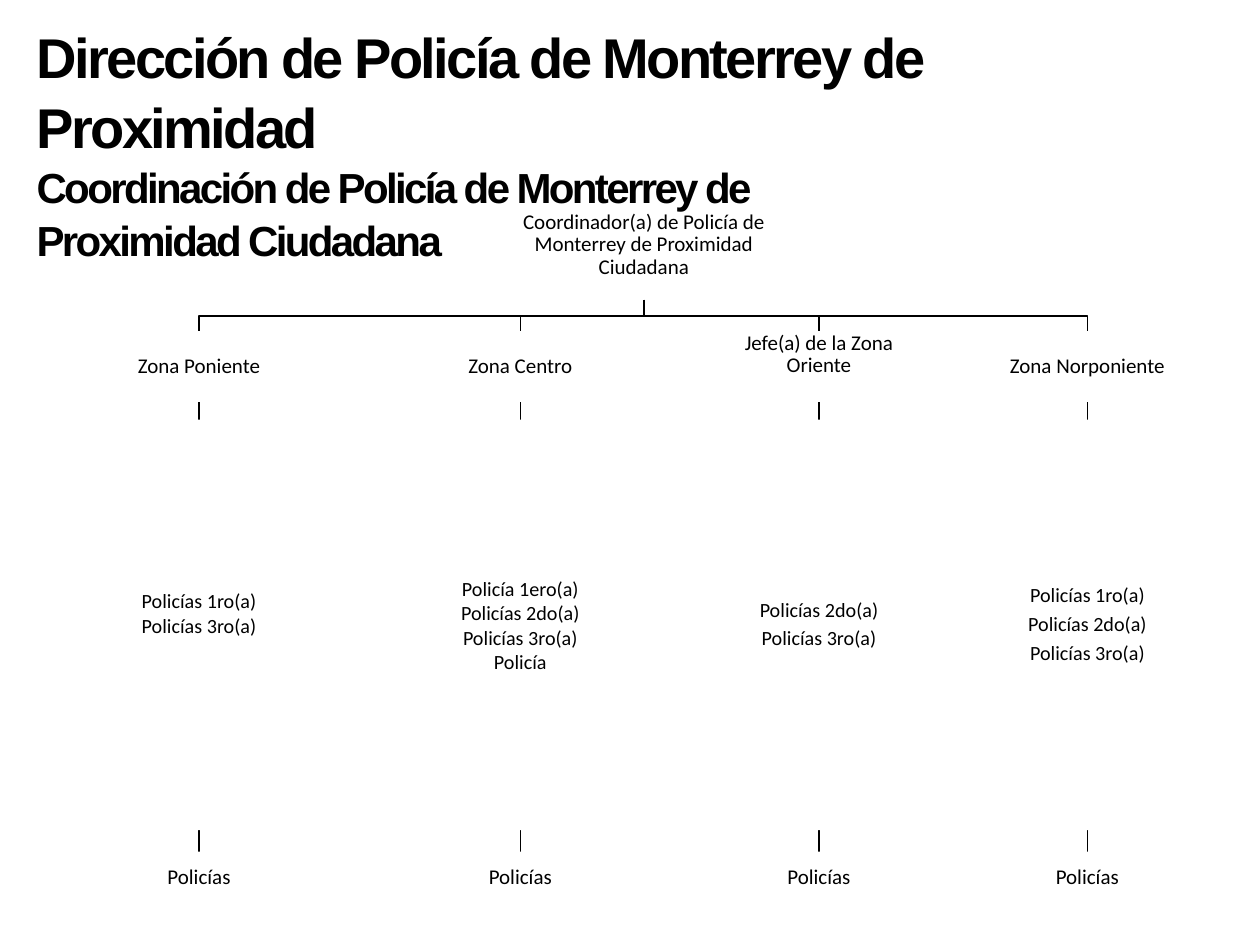
import pptx
import pptx.dml.color
import pptx.enum.shapes
import pptx.enum.text
import pptx.oxml
import pptx.util

Inches, Pt = pptx.util.Inches, pptx.util.Pt
ALIGN = pptx.enum.text.PP_ALIGN
ANCHOR = pptx.enum.text.MSO_ANCHOR
RECT = pptx.enum.shapes.MSO_SHAPE.RECTANGLE

COORD_X = 5.11
COORD_BOTTOM, BUS_Y = 2.38, 2.51
ZONE_TOP, ZONE_BOTTOM = 2.63, 3.19
RANKS_TOP, RANKS_BOTTOM = 3.33, 6.59
OFFICERS_TOP, OFFICERS_BOTTOM = 6.76, 7.17

SPACED = {"line_spacing": 0.9, "space_after": Pt(4)}
PLAIN = {"line_spacing": 1.0, "space_after": Pt(0)}
# Bottom inset that lifts centred text by half a line
LIFT = 0.2

# centre x, name, name inset, ranks width, ranks, ranks format, ranks inset
ZONES = [
    (1.58, "Zona Poniente", 0.01, 2.24,
     ["Policías 1ro(a)", "Policías 3ro(a)"], PLAIN, LIFT),
    (4.13, "Zona Centro", 0.01, 2.36,
     ["Policía 1ero(a)", "Policías 2do(a)", "Policías 3ro(a)", "Policía"],
     PLAIN, 0.01),
    (6.5, "Jefe(a) de la Zona Oriente", LIFT, 1.88,
     ["Policías 2do(a)", "Policías 3ro(a)"], SPACED, 0.01),
    (8.63, "Zona Norponiente", 0.01, 1.88,
     ["Policías 1ro(a)", "Policías 2do(a)", "Policías 3ro(a)"], SPACED, 0.01),
]


def color(value):
    return pptx.dml.color.RGBColor.from_string(value)


def apply(obj, values):
    for name, value in values.items():
        setattr(obj, name, value)


class Chart:
    """Style and current slide of the organisation chart."""
    ink, paper = "000000", "FFFFFF"
    title_font, body_font = "Arial", "Calibri"

    def __init__(self, slide):
        self.s = slide

    def add_text(self, p, text, font, size, bold=False):
        r = p.add_run()
        r.text = text
        apply(r.font, {"name": font, "size": Pt(size), "bold": bold})
        r.font.color.rgb = color(self.ink)
        return r

    def title(self, lines, left, top, width, height):
        sp = self.s.shapes.title
        apply(sp, {"left": Inches(left), "top": Inches(top),
                   "width": Inches(width), "height": Inches(height)})
        tf = sp.text_frame
        apply(tf, {"word_wrap": True, "vertical_anchor": ANCHOR.TOP,
                   "auto_size": pptx.enum.text.MSO_AUTO_SIZE.NONE,
                   "margin_top": Inches(0.07)})
        for i, (text, size) in enumerate(lines):
            p = tf.add_paragraph() if i else tf.paragraphs[0]
            apply(p, {"alignment": ALIGN.LEFT, "line_spacing": 1.04,
                      "space_before": Pt(0)})
            r = self.add_text(p, text, self.title_font, size, True)
            r.font._element.set("spc", "-150")

    def box(self, lines, cx, top, width, bottom, size=12, style=SPACED,
            inset=0.01, filled=True):
        area = [Inches(v) for v in (cx - width / 2, top, width, bottom - top)]
        if filled:
            sp = self.s.shapes.add_shape(RECT, *area)
            sp.shadow.inherit = False
            sp.fill.solid()
            sp.fill.fore_color.rgb = color(self.paper)
            sp.line.fill.background()
        else:
            sp = self.s.shapes.add_textbox(*area)
        tf = sp.text_frame
        edge = Inches(0.01)
        apply(tf, {"word_wrap": True, "vertical_anchor": ANCHOR.MIDDLE,
                   "margin_left": edge, "margin_right": edge,
                   "margin_top": edge, "margin_bottom": Inches(inset)})
        for i, text in enumerate(lines):
            p = tf.add_paragraph() if i else tf.paragraphs[0]
            apply(p, {"alignment": ALIGN.CENTER, **style})
            self.add_text(p, text, self.body_font, size)

    def stroke(self, line):
        line.color.rgb = color(self.ink)
        line.width = Pt(1)

    def stub(self, x, top, bottom):
        c = self.s.shapes.add_connector(
            pptx.enum.shapes.MSO_CONNECTOR.STRAIGHT,
            Inches(x), Inches(top), Inches(x), Inches(bottom))
        self.stroke(c.line)
        c._element.spPr.append(pptx.oxml.parse_xml(
            '<a:effectLst xmlns:a="http://schemas.openxmlformats.org/drawingml/2006/main"/>'))

    def branch(self, x):
        """Draw the elbow from the coordinator down to a zone."""
        points = [(Inches(a), Inches(b)) for a, b in (
            (COORD_X, COORD_BOTTOM), (COORD_X, BUS_Y), (x, BUS_Y), (x, ZONE_TOP))]
        fb = self.s.shapes.build_freeform(*points[0])
        fb.add_line_segments(points[1:], close=False)
        sp = fb.convert_to_shape()
        sp.shadow.inherit = False
        sp.fill.background()
        self.stroke(sp.line)


def main():
    prs = pptx.Presentation()
    prs.slide_width, prs.slide_height = Inches(10), Inches(7.5)
    chart = Chart(prs.slides.add_slide(prs.slide_layouts[5]))

    chart.title([("Dirección de Policía de Monterrey de Proximidad", 32),
                 ("Coordinación de Policía de Monterrey de Proximidad Ciudadana", 24)],
                0.19, 0.09, 7.46, 2.39)
    for x, *_ in reversed(ZONES):
        chart.stub(x, RANKS_BOTTOM, OFFICERS_TOP)
        chart.stub(x, ZONE_BOTTOM, RANKS_TOP)
        chart.branch(x)

    chart.box(["Coordinador(a) de Policía de Monterrey de Proximidad Ciudadana"],
              COORD_X, 1.7, 2.48, COORD_BOTTOM, inset=LIFT, filled=False)
    for x, name, name_inset, width, ranks, style, ranks_inset in ZONES:
        chart.box([name], x, ZONE_TOP, 1.54, ZONE_BOTTOM, inset=name_inset)
        chart.box(ranks, x, RANKS_TOP, width, RANKS_BOTTOM, 11.5, style, ranks_inset)
        chart.box(["Policías"], x, OFFICERS_TOP, 1.24, OFFICERS_BOTTOM)

    prs.save("out.pptx")


if __name__ == "__main__":
    main()
